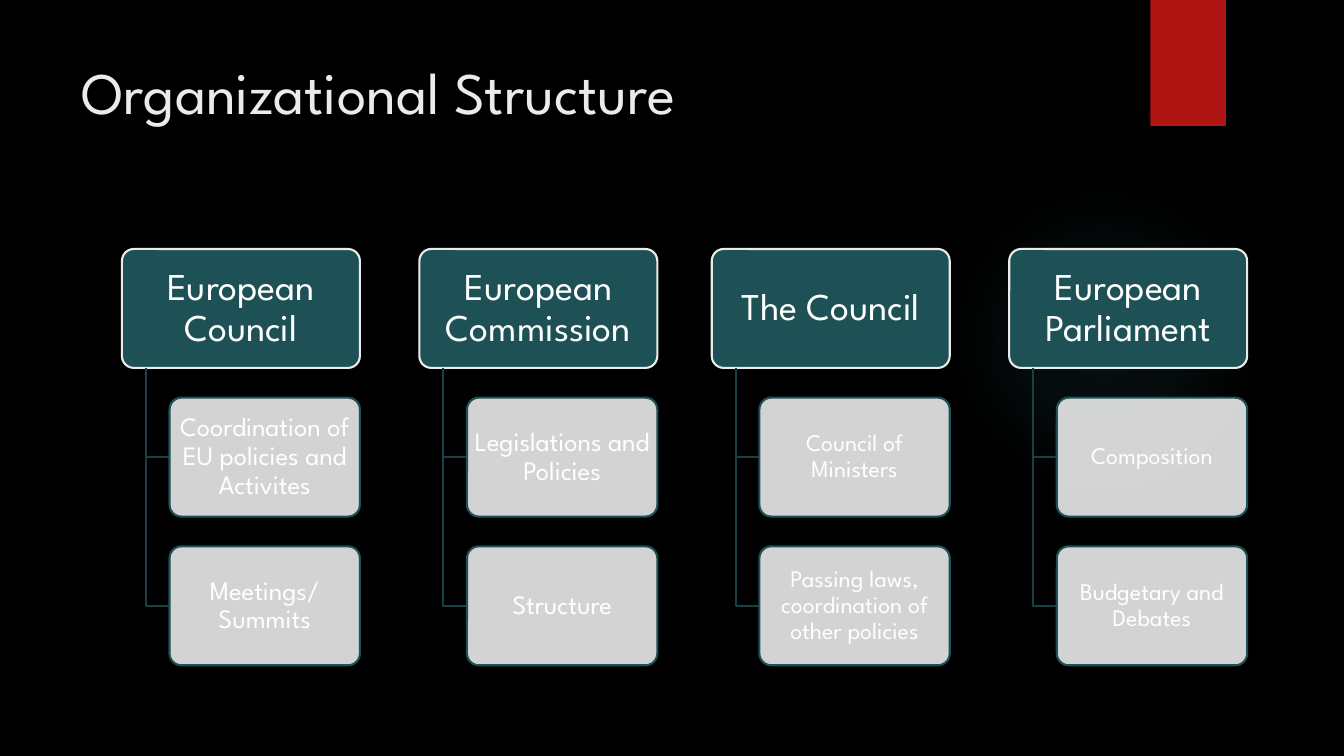
from dataclasses import dataclass

import lxml.etree
import pptx
import pptx.dml.color
import pptx.enum.shapes
import pptx.enum.text
import pptx.oxml
import pptx.oxml.ns
import pptx.shapes.autoshape
import pptx.slide
import pptx.text.text
import pptx.util

FONT = "League Spartan"
COLOURS = {
    "background": "000000",
    "glow": "50B9C1",
    "ribbon": "B01513",
    "pale": "EBEBEB",
    "institution": "1E5155",
    "branch": "184144",
    "label": "FFFFFF",
}

UNIT = 1.18
TOP = 2.47
COLUMN_PITCH = 2.5 * UNIT
ROW_PITCH = 1.25 * UNIT
INSTITUTION_WIDTH = 2 * UNIT
DUTY_INDENT = 0.4 * UNIT
DUTY_WIDTH = INSTITUTION_WIDTH - DUTY_INDENT
TRUNK_INDENT = 0.2 * UNIT


@dataclass(frozen=True)
class Institution:
    title: str
    duties: tuple[str, ...]


@dataclass(frozen=True)
class Chart:
    left: float
    duty_size: int
    institutions: tuple[Institution, ...]


@dataclass(frozen=True)
class BoxStyle:
    fill: str
    outline: str
    opacity: int
    margin_x: float
    margin_y: float
    size: int


CHARTS = (
    Chart(1.21, 19, (
        Institution("European Council", ("Coordination of EU policies and Activites", "Meetings/ Summits")),
        Institution("European Commission", ("Legislations and Policies", "Structure")),
    )),
    Chart(7.06, 17, (
        Institution("The Council", ("Council of Ministers", "Passing laws, coordination of other policies")),
        Institution("European Parliament", ("Composition", "Budgetary and Debates")),
    )),
)


def rgb(name: str) -> pptx.dml.color.RGBColor:
    return pptx.dml.color.RGBColor.from_string(COLOURS[name])


def format_text(paragraph: pptx.text.text._Paragraph, size: int, colour: str) -> None:
    for run in paragraph.runs:
        run.font.name = FONT
        run.font.size = pptx.util.Pt(size)
        run.font.color.rgb = rgb(colour)


def add_plain_shape(slide: pptx.slide.Slide, kind: pptx.enum.shapes.MSO_SHAPE,
                    left: float, top: float, width: float, height: float) -> pptx.shapes.autoshape.Shape:
    shape = slide.shapes.add_shape(kind, *map(pptx.util.Inches, (left, top, width, height)))
    shape.shadow.inherit = False
    shape.line.fill.background()
    return shape


def add_glow(slide: pptx.slide.Slide) -> None:
    glow = add_plain_shape(slide, pptx.enum.shapes.MSO_SHAPE.OVAL, 9.41, 1.83, 3.08, 3.08)
    glow.fill.background()
    stops = "".join(
        f'<a:gs pos="{position}000"><a:srgbClr val="{COLOURS["glow"]}">'
        f'<a:alpha val="{opacity}000"/></a:srgbClr></a:gs>'
        for position, opacity in ((0, 7), (36, 6), (69, 0))
    )
    gradient = pptx.oxml.parse_xml(
        f'<a:gradFill {pptx.oxml.ns.nsdecls("a")} rotWithShape="1"><a:gsLst>{stops}</a:gsLst>'
        '<a:path path="circle"><a:fillToRect l="50000" t="50000" r="50000" b="50000"/></a:path>'
        '</a:gradFill>'
    )
    properties = glow.element.spPr
    properties.replace(properties.find(pptx.oxml.ns.qn("a:noFill")), gradient)


def add_ribbon(slide: pptx.slide.Slide) -> None:
    ribbon = add_plain_shape(slide, pptx.enum.shapes.MSO_SHAPE.RECTANGLE, 11.41, 0, 0.75, 1.25)
    ribbon.fill.solid()
    ribbon.fill.fore_color.rgb = rgb("ribbon")


def add_heading(slide: pptx.slide.Slide) -> None:
    heading = slide.shapes.title
    heading.left, heading.top, heading.width, heading.height = map(
        pptx.util.Inches, (0.71, 0.5, 10.29, 1.53))
    frame = heading.text_frame
    frame.text = "Organizational Structure"
    frame.word_wrap = True
    frame.auto_size = pptx.enum.text.MSO_AUTO_SIZE.NONE
    frame.vertical_anchor = pptx.enum.text.MSO_ANCHOR.TOP
    frame.paragraphs[0].alignment = pptx.enum.text.PP_ALIGN.LEFT
    format_text(frame.paragraphs[0], 42, "pale")


def add_box(slide: pptx.slide.Slide, text: str, left: float, top: float, width: float, style: BoxStyle) -> None:
    box = add_plain_shape(slide, pptx.enum.shapes.MSO_SHAPE.ROUNDED_RECTANGLE, left, top, width, UNIT)
    box.adjustments[0] = 0.1
    box.fill.solid()
    box.fill.fore_color.rgb = rgb(style.fill)
    if style.opacity < 100:
        tint = box.element.spPr.find("/".join(map(pptx.oxml.ns.qn, ("a:solidFill", "a:srgbClr"))))
        lxml.etree.SubElement(tint, pptx.oxml.ns.qn("a:alpha"), val=str(style.opacity * 1000))
    box.line.color.rgb = rgb(style.outline)
    box.line.width = pptx.util.Pt(1.5)
    frame = box.text_frame
    frame.text = text
    frame.word_wrap = True
    frame.vertical_anchor = pptx.enum.text.MSO_ANCHOR.MIDDLE
    frame.margin_left = frame.margin_right = pptx.util.Inches(style.margin_x)
    frame.margin_top = frame.margin_bottom = pptx.util.Inches(style.margin_y)
    frame.paragraphs[0].alignment = pptx.enum.text.PP_ALIGN.CENTER
    frame.paragraphs[0].line_spacing = 0.9
    format_text(frame.paragraphs[0], style.size, "label")


def add_branch(slide: pptx.slide.Slide, left: float, duty_top: float) -> None:
    trunk = pptx.util.Inches(left + TRUNK_INDENT)
    middle = pptx.util.Inches(duty_top + UNIT / 2)
    builder = slide.shapes.build_freeform(trunk, pptx.util.Inches(TOP + UNIT))
    builder.add_line_segments(
        [(trunk, middle), (pptx.util.Inches(left + DUTY_INDENT), middle)], close=False)
    branch = builder.convert_to_shape()
    branch.shadow.inherit = False
    branch.fill.background()
    branch.line.color.rgb = rgb("branch")
    branch.line.width = pptx.util.Pt(1.5)


def add_chart_columns(slide: pptx.slide.Slide, chart: Chart) -> None:
    institution_style = BoxStyle("institution", "pale", 100, 0.06, 0.04, 27)
    duty_style = BoxStyle("pale", "institution", 90, 0.04, 0.03, chart.duty_size)
    for column, institution in enumerate(chart.institutions):
        left = chart.left + column * COLUMN_PITCH
        add_box(slide, institution.title, left, TOP, INSTITUTION_WIDTH, institution_style)
        for row, duty in enumerate(institution.duties, start=1):
            duty_top = TOP + row * ROW_PITCH
            add_branch(slide, left, duty_top)
            add_box(slide, duty, left + DUTY_INDENT, duty_top, DUTY_WIDTH, duty_style)


def main() -> None:
    deck = pptx.Presentation()
    deck.slide_width = pptx.util.Inches(13.33)
    deck.slide_height = pptx.util.Inches(7.5)
    slide = deck.slides.add_slide(deck.slide_layouts.get_by_name("Title Only"))
    slide.background.fill.solid()
    slide.background.fill.fore_color.rgb = rgb("background")
    add_glow(slide)
    add_ribbon(slide)
    add_heading(slide)
    for chart in CHARTS:
        add_chart_columns(slide, chart)
    deck.save("out.pptx")


if __name__ == "__main__":
    main()
